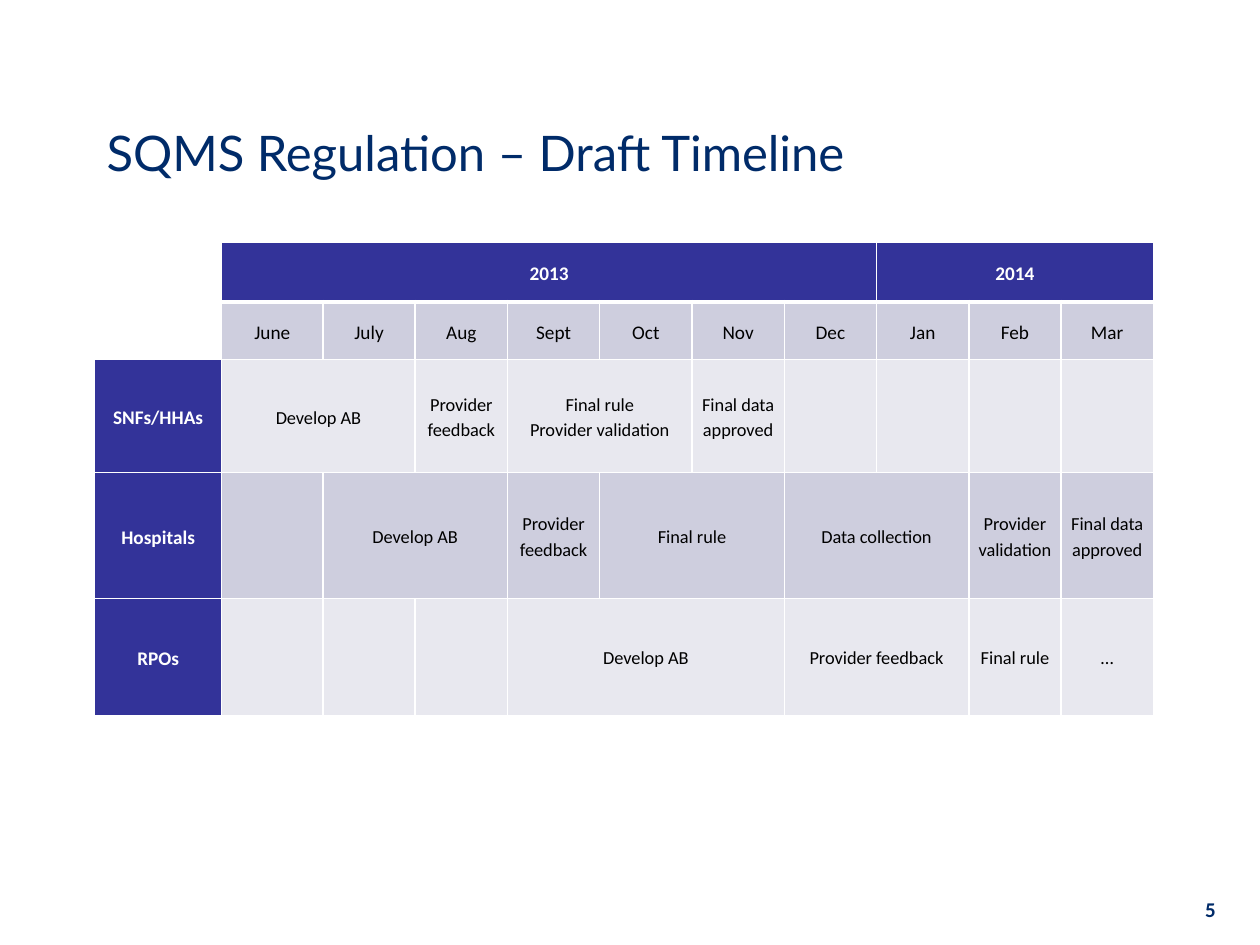
from dataclasses import dataclass
from typing import Any

from lxml import etree
from pptx import Presentation
from pptx.dml.color import RGBColor
from pptx.enum.text import MSO_ANCHOR, PP_ALIGN
from pptx.oxml.ns import qn
from pptx.util import Cm, Pt

MIDDLE = MSO_ANCHOR.MIDDLE
LEFT, CENTER, RIGHT = PP_ALIGN.LEFT, PP_ALIGN.CENTER, PP_ALIGN.RIGHT
COLORS = {
    "navy": "002B69", "header": "333399", "dark_band": "CECEDE",
    "light_band": "E8E8EF", "white": "FFFFFF", "black": "000000",
}
COLUMN_WIDTHS = [2.56, 2.04] + [1.86] * 9
ROW_HEIGHTS = [1.21, 1.16, 2.28, 2.54, 2.35]
BANDS = ["header", "dark_band", "light_band", "dark_band", "light_band"]
MONTHS = ["June", "July", "Aug", "Sept", "Oct", "Nov", "Dec", "Jan", "Feb", "Mar"]
TIMELINE = [
    [("", 1), ("2013", 7), ("2014", 3)],
    [("", 1)] + [(month, 1) for month in MONTHS],
    [("SNFs/HHAs", 1), ("Develop AB", 2), ("Provider feedback", 1),
     ("Final rule\nProvider validation", 2), ("Final data approved", 1)]
    + [("", 1)] * 4,
    [("Hospitals", 1), ("", 1), ("Develop AB", 2), ("Provider feedback", 1),
     ("Final rule", 2), ("Data collection", 2), ("Provider validation", 1),
     ("Final data approved", 1)],
    [("RPOs", 1)] + [("", 1)] * 3
    + [("Develop AB", 3), ("Provider feedback", 2), ("Final rule", 1), ("…", 1)],
]


@dataclass
class TimelineSlide:
    """Draws styled text and the timeline table on one slide."""

    slide: Any
    body_font: str = "Calibri"
    title_font: str = "Lato"

    def add_text_run(self, paragraph, text, size, color, bold, font, align):
        paragraph.alignment = align
        run = paragraph.add_run()
        run.text = text
        run.font.name = font
        run.font.size = Pt(size)
        run.font.bold = bold
        run.font.color.rgb = RGBColor.from_string(COLORS[color])

    def text(self, box, text, size, font, bold=False, align=LEFT):
        frame = self.slide.shapes.add_textbox(*map(Cm, box)).text_frame
        frame.word_wrap = True
        frame.vertical_anchor = MIDDLE
        self.add_text_run(frame.paragraphs[0], text, size, "navy", bold, font, align)

    def borders(self, cell, top, bottom):
        properties = cell._tc.get_or_add_tcPr()
        widths = {"a:lnL": 1, "a:lnR": 1, "a:lnT": top, "a:lnB": bottom}
        for index, (tag, width) in enumerate(widths.items()):
            line = etree.Element(qn(tag), w=str(Pt(width)))
            fill = etree.SubElement(line, qn("a:solidFill"))
            etree.SubElement(fill, qn("a:srgbClr"), val=COLORS["white"])
            properties.insert(index, line)

    def fill_cell(self, cell, text, size, color, bold, space_after):
        cell.vertical_anchor = MIDDLE
        cell.margin_left = cell.margin_right = Cm(0.18)
        cell.margin_top = cell.margin_bottom = 0
        frame = cell.text_frame
        for index, line in enumerate(text.split("\n")):
            paragraph = frame.add_paragraph() if index else frame.paragraphs[0]
            paragraph.line_spacing = 1.15
            paragraph.space_after = Pt(space_after)
            self.add_text_run(paragraph, line, size, color, bold, self.body_font, CENTER)

    def table(self, left, top, rows):
        size = Cm(sum(COLUMN_WIDTHS)), Cm(sum(ROW_HEIGHTS))
        table = self.slide.shapes.add_table(
            len(ROW_HEIGHTS), len(COLUMN_WIDTHS), Cm(left), Cm(top), *size
        ).table
        for column, width in zip(table.columns, COLUMN_WIDTHS):
            column.width = Cm(width)
        for row, height in zip(table.rows, ROW_HEIGHTS):
            row.height = Cm(height)
        for row, entries in enumerate(rows):
            column = 0
            for text, span in entries:
                cell = table.cell(row, column)
                if span > 1:
                    cell.merge(table.cell(row, column + span - 1))
                is_header = row == 0 or column == 0
                is_label = is_header or row == 1
                if text:
                    self.fill_cell(
                        cell, text, 11 if is_label else 10.5,
                        "white" if is_header else "black", is_header,
                        10 if is_label else 0,
                    )
                fill = BANDS[row]
                if column == 0:
                    fill = "header" if text else "white"
                for offset in range(span):
                    part = table.cell(row, column + offset)
                    part.fill.solid()
                    part.fill.fore_color.rgb = RGBColor.from_string(COLORS[fill])
                    self.borders(part, 3 if row == 1 else 1, 3 if row == 0 else 1)
                column += span


def main():
    presentation = Presentation()
    presentation.slide_width = Cm(25.4)
    presentation.slide_height = Cm(19.05)
    page = TimelineSlide(presentation.slides.add_slide(presentation.slide_layouts[6]))
    page.text((19.48, 17.98, 5.28, 0.69), "5", 12, page.body_font, True, RIGHT)
    page.text((1.9, 1.7, 21.6, 2.74), "SQMS Regulation – Draft Timeline", 28, page.title_font)
    page.table(1.91, 4.88, TIMELINE)
    presentation.save("out.pptx")


if __name__ == "__main__":
    main()
